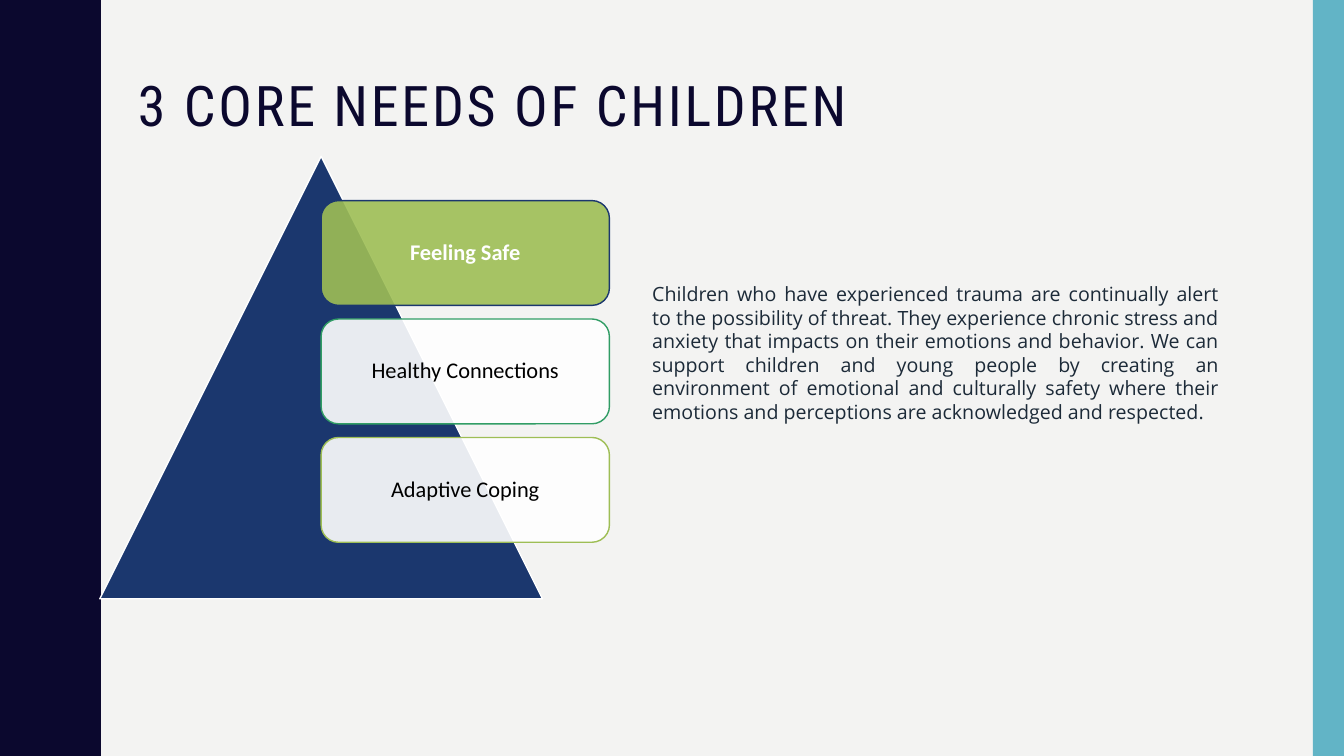
from lxml import etree
from pptx import Presentation
from pptx.dml.color import RGBColor
from pptx.enum import shapes, text
from pptx.oxml import ns
from pptx.util import Inches, Pt

NAVY = RGBColor(0x0B, 0x08, 0x2E)
TEAL = RGBColor(0x62, 0xB4, 0xC6)
PAPER = RGBColor(0xF3, 0xF3, 0xF2)
BLUE = RGBColor(0x1B, 0x37, 0x6E)
GREEN = RGBColor(0x31, 0x9D, 0x65)
LIME = RGBColor(0x9E, 0xBE, 0x55)
SLATE = RGBColor(0x1C, 0x2A, 0x38)
WHITE = RGBColor(0xFF, 0xFF, 0xFF)
BLACK = RGBColor(0, 0, 0)

WIDE, HIGH = 13.33, 7.5
HALF = 0.75  # height of half a wave
CURVE = [(0.78, 0), (0.78, 0.07), (0.79, 0.14), (0.8, 0.2), (0.81, 0.25),
         (0.93, 0.5), (0.95, 0.55), (0.96, 0.61), (0.97, 0.68)]
NEEDS = [("Feeling Safe", LIME, BLUE, WHITE, True),
         ("Healthy Connections", WHITE, GREEN, BLACK, False),
         ("Adaptive Coping", WHITE, LIME, BLACK, False)]
BODY = (
    "Children who have experienced trauma are continually alert to the "
    "possibility of threat. They experience chronic stress and anxiety that "
    "impacts on their emotions and behavior. We can support children and young "
    "people by creating an environment of emotional and culturally safety where "
    "their emotions and perceptions are acknowledged and respected.")


def paint(shape, fill, line=None):
    shape.shadow.inherit = False
    shape.fill.solid()
    shape.fill.fore_color.rgb = fill
    if line is None:
        shape.line.fill.background()
    else:
        shape.line.color.rgb = line
        shape.line.width = Pt(1)


def fade(shape, alpha):
    """Set the opacity of a solid fill, in percent."""
    color = shape.fill._xPr.find(ns.qn("a:solidFill"))[0]
    etree.SubElement(color, ns.qn("a:alpha")).set("val", str(alpha * 1000))


def write(shape, words, font, size, color, align, bold=False):
    frame = shape.text_frame
    frame.word_wrap = True
    frame.text = words
    para = frame.paragraphs[0]
    para.alignment = align
    run = para.runs[0]
    run.font.name, run.font.size, run.font.bold = font, Pt(size), bold
    run.font.color.rgb = color
    return frame


def add_box(slide, x, y, w, h):
    return slide.shapes.add_textbox(Inches(x), Inches(y), Inches(w), Inches(h))


def add_form(slide, kind, x, y, w, h):
    return slide.shapes.add_shape(kind, Inches(x), Inches(y), Inches(w), Inches(h))


def add_edges(slide):
    """Wavy band on the left and plain band on the right."""
    wave = []
    for row in range(round(HIGH / HALF)):
        if row % 2 == 0:
            wave += [(x, row * HALF + y) for x, y in CURVE]
        else:
            wave += [(0.97, row * HALF)]
            wave += [(x, (row + 1) * HALF - y) for x, y in CURVE[:0:-1]]
    wave += [(0.78, HIGH), (0, HIGH)]
    pen = slide.shapes.build_freeform(0, 0, scale=Inches(1))
    pen.add_line_segments(wave, close=True)
    paint(pen.convert_to_shape(), NAVY)
    paint(add_form(slide, shapes.MSO_SHAPE.RECTANGLE, 13.02, 0, 0.31, HIGH), TEAL)


def add_title(slide, x, y, w, h):
    frame = write(add_box(slide, x, y, w, h), "3 CORE NEEDS OF CHILDREN",
                  "Roboto Condensed", 40, NAVY, text.PP_ALIGN.LEFT)
    frame.vertical_anchor = text.MSO_ANCHOR.MIDDLE
    para = frame.paragraphs[0]
    para.line_spacing = 0.9
    para.runs[0].font._element.set("spc", "200")


def add_needs(slide, x, y, side):
    """Triangle with a column of cards that starts on its middle line."""
    peak = add_form(slide, shapes.MSO_SHAPE.ISOSCELES_TRIANGLE, x, y, side, side)
    paint(peak, BLUE, WHITE)
    for row, (words, fill, line, color, bold) in enumerate(NEEDS):
        card = add_form(slide, shapes.MSO_SHAPE.ROUNDED_RECTANGLE,
                        x + side / 2, y + 0.44 + row * 1.175, 2.86, 1.04)
        paint(card, fill, line)
        fade(card, 90)
        frame = write(card, words, "Calibri", 16, color,
                      text.PP_ALIGN.CENTER, bold)
        frame.vertical_anchor = text.MSO_ANCHOR.MIDDLE
        frame.paragraphs[0].line_spacing = 0.9


def add_body(slide, x, y, w, h):
    frame = write(add_box(slide, x, y, w, h), BODY, "Open Sans", 14, SLATE,
                  text.PP_ALIGN.JUSTIFY)
    frame.auto_size = text.MSO_AUTO_SIZE.SHAPE_TO_FIT_TEXT


def main():
    deck = Presentation()
    deck.slide_width, deck.slide_height = Inches(WIDE), Inches(HIGH)
    slide = deck.slides.add_slide(deck.slide_layouts[6])
    slide.background.fill.solid()
    slide.background.fill.fore_color.rgb = PAPER
    add_edges(slide)
    add_title(slide, 1.27, 0.56, 11.7, 1.03)
    add_needs(slide, 0.99, 1.55, 4.39)
    add_body(slide, 6.37, 2.75, 5.82, 1.51)
    deck.save("out.pptx")


if __name__ == "__main__":
    main()
